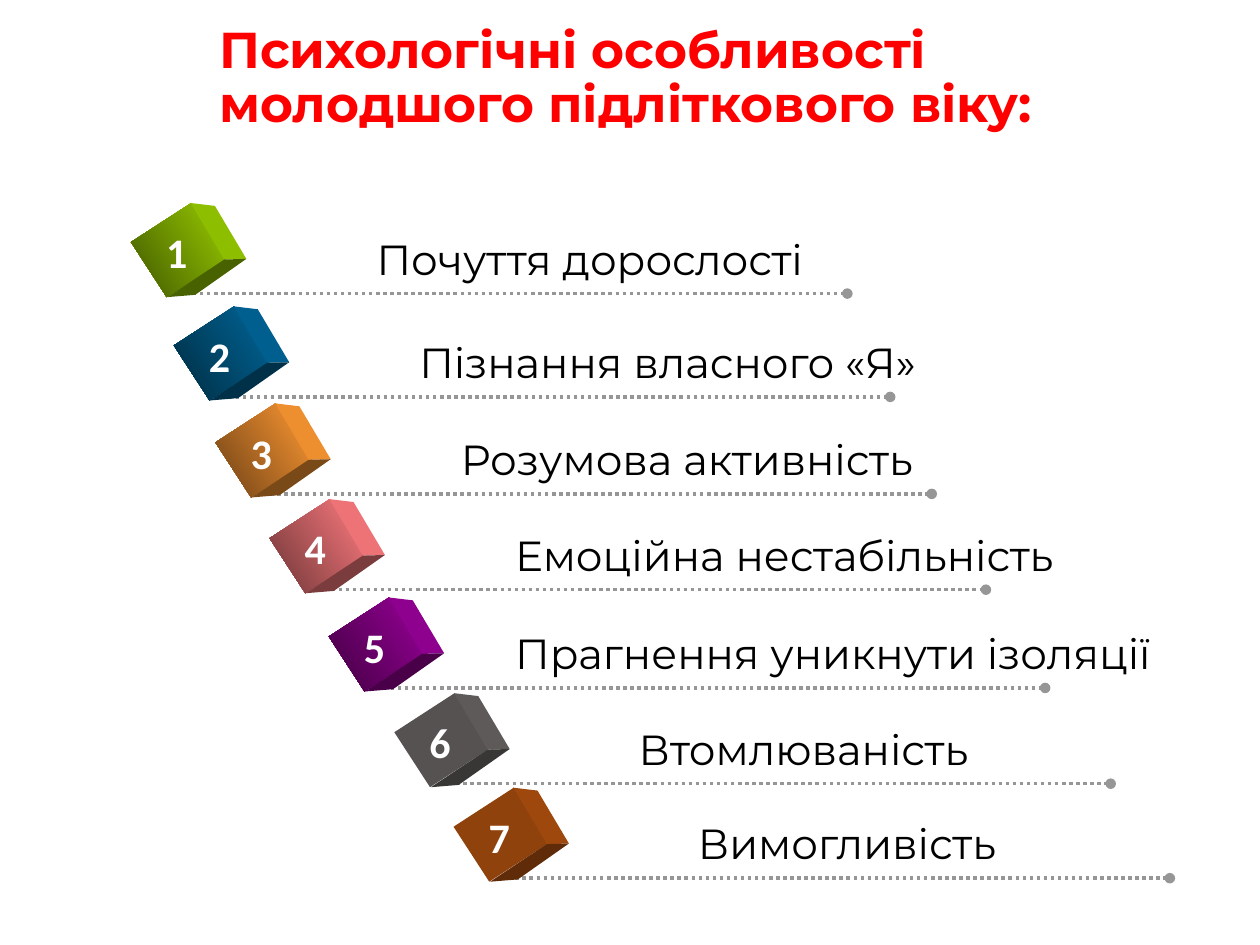
from dataclasses import dataclass

import pptx
import pptx.dml.color
import pptx.enum.dml
import pptx.enum.shapes
import pptx.enum.text
import pptx.oxml.ns
import pptx.util
from lxml import etree

RGBColor = pptx.dml.color.RGBColor
RED = RGBColor(0xFF, 0x00, 0x00)
BLACK = RGBColor(0x00, 0x00, 0x00)
WHITE = RGBColor(0xFF, 0xFF, 0xFF)
GREY = RGBColor(0x96, 0x96, 0x96)
GREEN = RGBColor(0x99, 0xCC, 0x00)
DARK_GREEN = RGBColor(0x6D, 0x92, 0x00)
BLUE = RGBColor(0x00, 0x66, 0x99)
DARK_BLUE = RGBColor(0x00, 0x49, 0x6D)
ORANGE = RGBColor(0xFF, 0x99, 0x33)
DARK_ORANGE = RGBColor(0xB6, 0x6D, 0x24)
PINK = RGBColor(0xFF, 0x7C, 0x80)
DARK_PINK = RGBColor(0xB6, 0x59, 0x5C)
PURPLE = RGBColor(0x99, 0x00, 0x99)
DARK_PURPLE = RGBColor(0x6D, 0x00, 0x6D)
STONE = RGBColor(0x76, 0x71, 0x71)
BROWN = RGBColor(0xC5, 0x5A, 0x11)
DARK_BROWN = RGBColor(0x84, 0x3C, 0x0B)

# Grid of 100 columns by 75 rows
SLIDE_WIDTH = pptx.util.Inches(10)
SLIDE_HEIGHT = pptx.util.Inches(7.5)
COLUMN = SLIDE_WIDTH / 100
ROW = SLIDE_HEIGHT / 75

# Cube faces, as columns and rows from the middle of the front face
CUBE_WIDTH, CUBE_HEIGHT, CUBE_ROTATION = 5.2, 5.7, 57
RIGHT_FACE = [(0.95, -3.73), (2.86, -3.5), (5.35, 0.7), (3.6, 0.75)]
BOTTOM_FACE = [(3.6, 0.75), (5.35, 0.7), (1.3, 3.55), (-0.9, 3.73)]


@dataclass
class Trait:
    text: str
    column: float
    row: float
    label_column: float
    label_width: float
    light: RGBColor
    dark: RGBColor
    gradient: bool = True


TRAITS = [
    Trait("Почуття дорослості", 11.6, 17, 28.9, 38.9, GREEN, DARK_GREEN),
    Trait("Пізнання власного «Я»", 15, 25.2, 32.3, 46.7, BLUE, DARK_BLUE),
    Trait("Розумова активність", 18.3, 32.9, 35.6, 41.7, ORANGE, DARK_ORANGE),
    Trait("Емоційна нестабільність", 22.6, 40.5, 39.9, 49.4, PINK, DARK_PINK),
    Trait("Прагнення уникнути ізоляції", 27.3, 48.3, 39.9, 57.1, PURPLE, DARK_PURPLE),
    Trait("Втомлюваність", 32.5, 55.9, 49.7, 31, STONE, STONE, False),
    Trait("Вимогливість", 37.2, 63.4, 54.4, 27.8, BROWN, DARK_BROWN, False),
]


def across(columns: float) -> int:
    return round(columns * COLUMN)


def down(rows: float) -> int:
    return round(rows * ROW)


def shade(color: RGBColor, share: float) -> RGBColor:
    return RGBColor(*(round(channel * share) for channel in color))


def style_text(paragraph, size: float, font: str, color: RGBColor, bold: bool) -> None:
    for run in paragraph.runs:
        run.font.size = pptx.util.Pt(size)
        run.font.name = font
        run.font.color.rgb = color
        run.font.bold = bold


def add_text(shapes, text: str, column: float, row: float, width: float,
             font: str, color: RGBColor, bold: bool) -> None:
    box = shapes.add_textbox(across(column), down(row), across(width), down(5.1))
    box.text_frame.text = text
    box.text_frame.word_wrap = False
    box.text_frame.auto_size = pptx.enum.text.MSO_AUTO_SIZE.SHAPE_TO_FIT_TEXT
    style_text(box.text_frame.paragraphs[0], 24, font, color, bold)


def add_dotted_line(shapes, column: float, row: float, length: float) -> None:
    line = shapes.add_connector(
        pptx.enum.shapes.MSO_CONNECTOR.STRAIGHT,
        across(column), down(row), across(column + length), down(row))
    line.line.color.rgb = GREY
    line.line.width = pptx.util.Pt(2)
    line.line.dash_style = pptx.enum.dml.MSO_LINE.ROUND_DOT
    tail = etree.SubElement(line.line._get_or_add_ln(), pptx.oxml.ns.qn("a:tailEnd"))
    tail.set("type", "oval")
    etree.SubElement(line._element.spPr, pptx.oxml.ns.qn("a:effectLst"))


def add_face(shapes, center: tuple[float, float],
             corners: list[tuple[float, float]], color: RGBColor) -> None:
    points = [(across(center[0] + x), down(center[1] + y)) for x, y in corners]
    builder = shapes.build_freeform(*points[0])
    builder.add_line_segments(points[1:], close=True)
    face = builder.convert_to_shape()
    face.shadow.inherit = False
    face.fill.solid()
    face.fill.fore_color.rgb = color
    face.line.fill.background()


def add_cube(shapes, trait: Trait) -> None:
    center = (trait.column + CUBE_WIDTH / 2, trait.row + CUBE_HEIGHT / 2)
    front = shapes.add_shape(
        pptx.enum.shapes.MSO_SHAPE.RECTANGLE, across(trait.column), down(trait.row),
        across(CUBE_WIDTH), down(CUBE_HEIGHT))
    front.rotation = CUBE_ROTATION
    front.shadow.inherit = False
    front.line.fill.background()
    if trait.gradient:
        front.fill.gradient()
        front.fill.gradient_angle = 270
        for stop, color in zip(front.fill.gradient_stops,
                               (trait.light, shade(trait.dark, 0.6))):
            stop.color.rgb = color
    else:
        front.fill.solid()
        front.fill.fore_color.rgb = shade(trait.light, 0.73)
    add_face(shapes, center, RIGHT_FACE, shade(trait.light, 0.93 if trait.gradient else 0.8))
    add_face(shapes, center, BOTTOM_FACE, shade(trait.light, 0.48))


def add_trait(slide, number: int, trait: Trait) -> None:
    shapes = slide.shapes.add_group_shape().shapes
    add_dotted_line(shapes, trait.column + 3.15, trait.row + 6.3, 52.5)
    add_cube(shapes, trait)
    add_text(shapes, trait.text, trait.label_column, trait.row + 1,
             trait.label_width, "Montserrat", BLACK, False)
    add_text(shapes, str(number), trait.column + 0.6, trait.row + 0.5,
             3.9, "Calibri", WHITE, True)


def add_title(slide) -> None:
    title = slide.shapes.title
    title.left, title.top = across(16.4), down(3.8)
    title.width, title.height = across(82.6), down(9.8)
    frame = title.text_frame
    frame.text = "Психологічні особливості молодшого підліткового віку:\v"
    frame.word_wrap = True
    frame.auto_size = pptx.enum.text.MSO_AUTO_SIZE.NONE
    frame.vertical_anchor = pptx.enum.text.MSO_ANCHOR.MIDDLE
    paragraph = frame.paragraphs[0]
    paragraph.alignment = pptx.enum.text.PP_ALIGN.LEFT
    paragraph.line_spacing = 0.9
    paragraph.font.size = pptx.util.Pt(28.8)
    style_text(paragraph, 28.8, "Montserrat", RED, True)


def main() -> None:
    presentation = pptx.Presentation()
    presentation.slide_width = SLIDE_WIDTH
    presentation.slide_height = SLIDE_HEIGHT
    slide = presentation.slides.add_slide(presentation.slide_layouts[5])
    add_title(slide)
    for number, trait in enumerate(TRAITS, start=1):
        add_trait(slide, number, trait)
    presentation.save("out.pptx")


if __name__ == "__main__":
    main()
